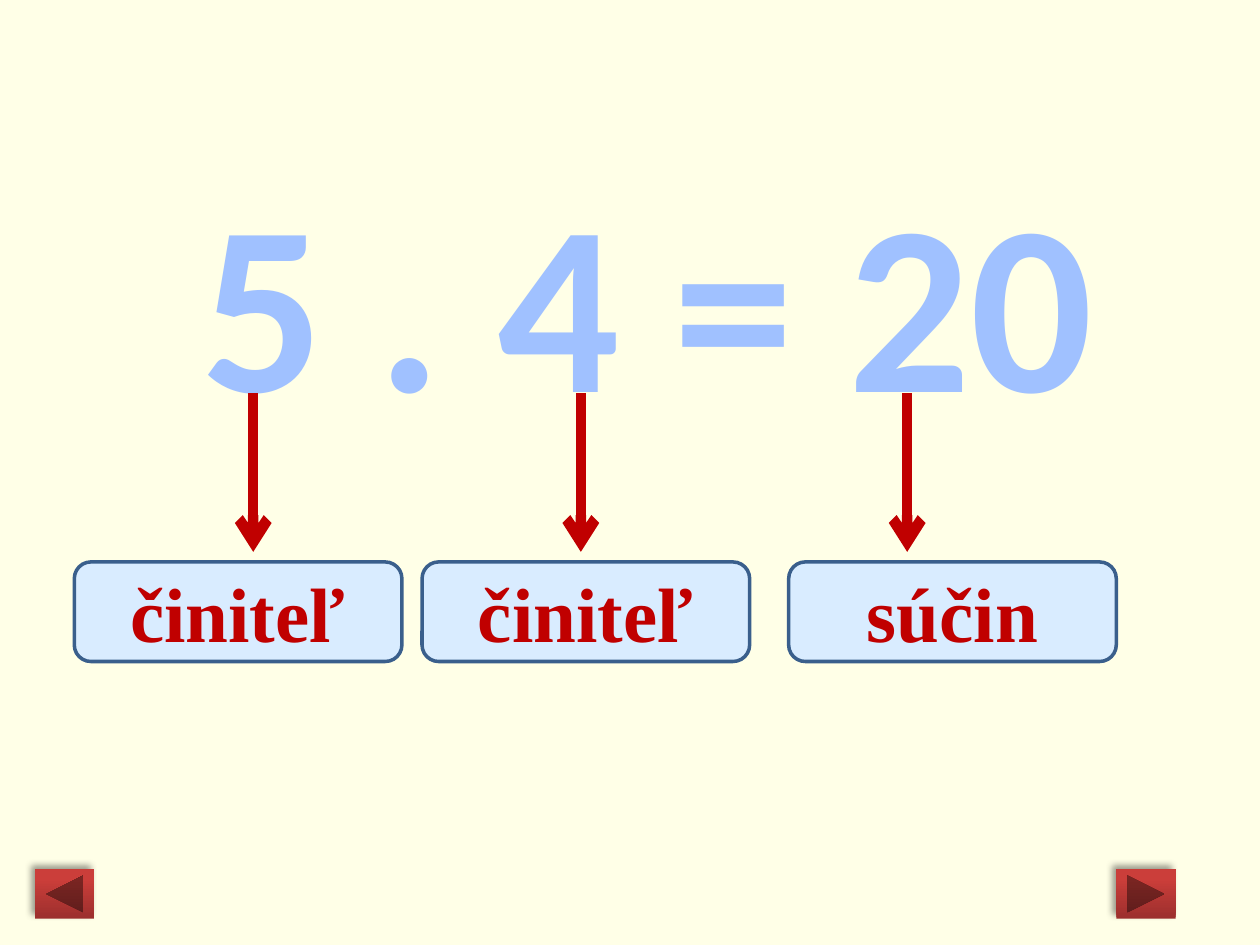
from lxml.etree import SubElement
from pptx import Presentation
from pptx.dml.color import RGBColor
from pptx.enum.shapes import MSO_CONNECTOR, MSO_SHAPE
from pptx.enum.text import MSO_ANCHOR, MSO_AUTO_SIZE, PP_ALIGN
from pptx.oxml.ns import qn
from pptx.util import Inches, Pt


def rgb(code):
    return RGBColor.from_string(code)


def write(frame, text, font="Calibri", size=44, color="000000", bold=True,
          anchor=MSO_ANCHOR.MIDDLE, wrap=True):
    frame.auto_size = MSO_AUTO_SIZE.NONE
    frame.word_wrap = wrap
    frame.vertical_anchor = anchor
    para = frame.paragraphs[0]
    para.alignment = PP_ALIGN.CENTER
    run = para.add_run()
    run.text = text
    run.font.name = font
    run.font.size = Pt(size)
    run.font.bold = bold
    run.font.color.rgb = rgb(color)


class Board:
    paper, digit, red = "FFFFE7", "A0C1FF", "C00000"
    pale, edge = "D9ECFF", "3A5F8C"
    dark, light = "9C2F2D", "CB3E3A"

    def __init__(self, slide):
        self.slide = slide
        fill = slide.background.fill
        fill.solid()
        fill.fore_color.rgb = rgb(self.paper)

    def title(self, text, x, y, w, h):
        shape = self.slide.shapes.title
        shape.left, shape.top = Inches(x), Inches(y)
        shape.width, shape.height = Inches(w), Inches(h)
        write(shape.text_frame, text, size=138, color=self.digit,
              anchor=MSO_ANCHOR.TOP, wrap=False)

    def arrow(self, x, top, end):
        line = self.slide.shapes.add_connector(
            MSO_CONNECTOR.STRAIGHT, Inches(x), Inches(top), Inches(x), Inches(end))
        line.line.color.rgb = rgb(self.red)
        line.line.width = Pt(6)
        SubElement(line.line._get_or_add_ln(), qn("a:tailEnd"), type="arrow")
        SubElement(line._element.spPr, qn("a:effectLst"))

    def shape(self, kind, x, y, w, h):
        shape = self.slide.shapes.add_shape(
            kind, Inches(x), Inches(y), Inches(w), Inches(h))
        shape.shadow.inherit = False
        return shape

    def label(self, text, x, y, w, h):
        box = self.shape(MSO_SHAPE.ROUNDED_RECTANGLE, x, y, w, h)
        box.fill.solid()
        box.fill.fore_color.rgb = rgb(self.pale)
        box.line.color.rgb = rgb(self.edge)
        box.line.width = Pt(2)
        write(box.text_frame, text, font="Times New Roman", color=self.red)

    def button(self, kind, x, y, w, h):
        shape = self.shape(kind, x, y, w, h)
        shape.line.fill.background()
        shape.fill.gradient()
        shape.fill.gradient_angle = 90
        stops = shape.fill.gradient_stops
        for stop, color, place in zip(stops, (self.dark, self.light), (0, 0.8)):
            stop.color.rgb = rgb(color)
            stop.position = place
        # Soft shadow to the upper left
        effect = shape._element.spPr.find(qn("a:effectLst"))
        shade = SubElement(effect, qn("a:outerShdw"), blurRad=str(Pt(4)),
                           dist=str(Pt(3)), dir="13500000", rotWithShape="0")
        tone = SubElement(shade, qn("a:srgbClr"), val="000000")
        SubElement(tone, qn("a:alpha"), val="40000")


def main():
    deck = Presentation()
    deck.slide_width, deck.slide_height = Inches(10), Inches(7.5)
    board = Board(deck.slides.add_slide(deck.slide_layouts[5]))

    # Equation
    board.title("5 . 4 = 20", 1.46, 1.15, 7.36, 2.42)

    # Arrows from the numbers to their names
    for x in (2.01, 4.61, 7.2):
        board.arrow(x, 3.12, 4.38)
    for text, x in (("činiteľ", 0.59), ("činiteľ", 3.35), ("súčin", 6.26)):
        board.label(text, x, 4.46, 2.6, 0.79)

    # Page buttons
    board.button(MSO_SHAPE.ACTION_BUTTON_BACK_OR_PREVIOUS, 0.28, 6.9, 0.47, 0.39)
    board.button(MSO_SHAPE.ACTION_BUTTON_FORWARD_OR_NEXT, 8.86, 6.9, 0.47, 0.39)

    deck.save("out.pptx")


if __name__ == "__main__":
    main()
